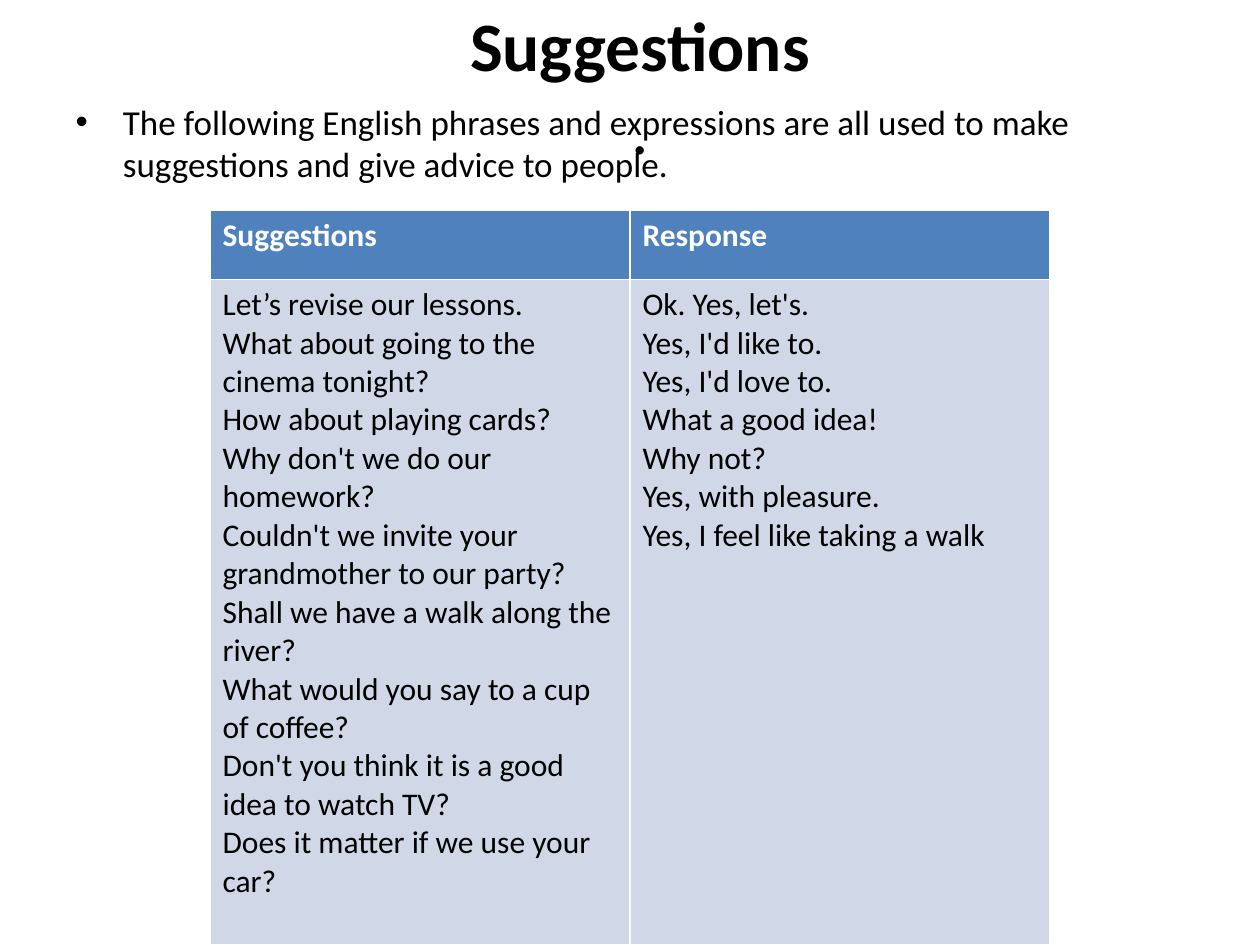
from copy import deepcopy

from pptx import Presentation
from pptx.dml.color import RGBColor
from pptx.enum.text import MSO_ANCHOR, PP_ALIGN
from pptx.util import Inches, Pt

CENTER, MIDDLE = PP_ALIGN.CENTER, MSO_ANCHOR.MIDDLE
COLORS = {"ink": "000000", "paper": "FFFFFF", "header": "4F81BD", "band": "D0D8E8"}

HEADING, DOT = "Suggestions", "."
INTRO = ("The following English phrases and expressions are all used "
         "to make suggestions and give advice to people.")
PHRASES = {
    "Suggestions": [
        "Let’s revise our lessons.",
        "What about going to the cinema tonight?",
        "How about playing cards?",
        "Why don't we do our homework?",
        "Couldn't we invite your grandmother to our party?",
        "Shall we have a walk along the river?",
        "What would you say to a cup of coffee?",
        "Don't you think it is a good idea to watch TV?",
        "Does it matter if we use your car?",
    ],
    "Response": [
        "Ok. Yes, let's.",
        "Yes, I'd like to.",
        "Yes, I'd love to.",
        "What a good idea!",
        "Why not?",
        "Yes, with pleasure.",
        "Yes, I feel like taking a walk",
    ],
}
WIDTH, HEIGHT = 10, 7.5
ROW_HEIGHTS = [0.55, 5.28]


def add_text(paragraph, text, size=18, color="ink", bold=False):
    run = paragraph.add_run()
    run.text = text
    run.font.name = "Calibri"
    run.font.size = Pt(size)
    run.font.bold = bold
    run.font.color.rgb = RGBColor.from_string(COLORS[color])
    return run


def place(shape, *box):
    shape.left, shape.top, shape.width, shape.height = map(Inches, box)


def fill_cell(cell, lines, fill, **text_format):
    cell.fill.solid()
    cell.fill.fore_color.rgb = RGBColor.from_string(COLORS[fill])
    frame = cell.text_frame
    for number, line in enumerate(lines):
        paragraph = frame.add_paragraph() if number else frame.paragraphs[0]
        add_text(paragraph, line, **text_format)


def build():
    deck = Presentation()
    deck.slide_width, deck.slide_height = Inches(WIDTH), Inches(HEIGHT)
    slide = deck.slides.add_slide(deck.slide_layouts[1])

    heading = slide.shapes.title
    place(heading, 0.58, 0.42, 9, 1.17)
    heading.text_frame.vertical_anchor = MIDDLE
    line = heading.text_frame.paragraphs[0]
    line.alignment = CENTER
    for text, bold in ((HEADING, True), (DOT, False)):
        run = add_text(line, text, size=39.6, bold=bold)
        line.add_line_break()
        line._p[-1].append(deepcopy(run._r.rPr))

    intro = slide.placeholders[1]
    place(intro, 0.5, 0.75, 9, 6.33)
    add_text(intro.text_frame.paragraphs[0], INTRO, size=20)

    table_width = WIDTH * 2 / 3
    left = (WIDTH - table_width) / 2
    phrases = slide.shapes.add_table(
        len(ROW_HEIGHTS), len(PHRASES), Inches(left), Inches(left),
        Inches(table_width), Inches(sum(ROW_HEIGHTS))).table
    for row, height in zip(phrases.rows, ROW_HEIGHTS):
        row.height = Inches(height)
    for column, (header, lines) in enumerate(PHRASES.items()):
        fill_cell(phrases.cell(0, column), [header], "header", color="paper", bold=True)
        fill_cell(phrases.cell(1, column), lines, "band")

    deck.save("out.pptx")


if __name__ == "__main__":
    build()
